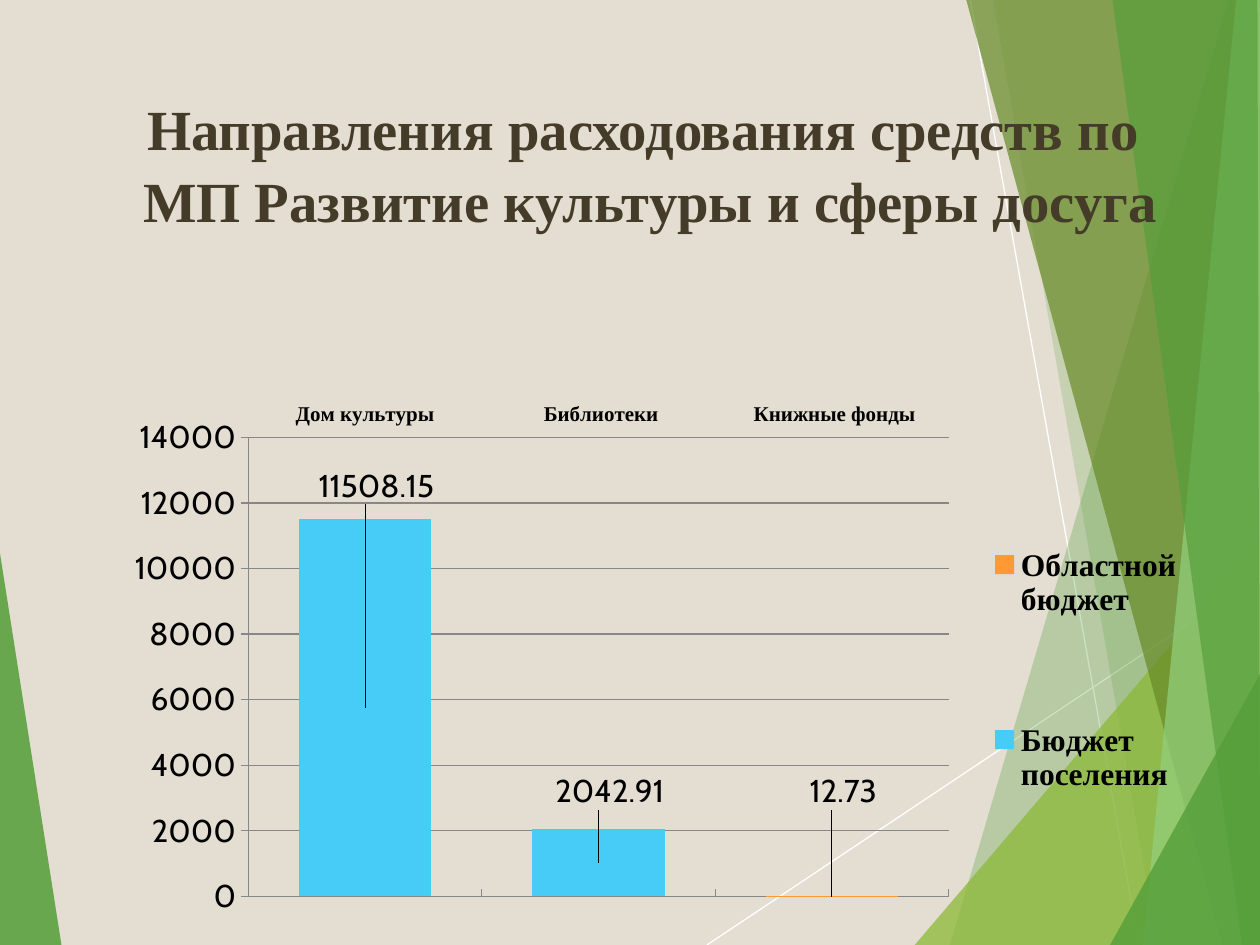
"""Build a slide with a stacked column chart of culture spending."""
from lxml import etree
from pptx import Presentation
from pptx import util as u
from pptx.chart.data import CategoryChartData
from pptx.dml.color import RGBColor
from pptx.enum import chart as charts, shapes, text
from pptx.oxml.ns import qn

WHITE = RGBColor(0xFF, 0xFF, 0xFF)
BLACK = RGBColor(0, 0, 0)
SAND = RGBColor(0xE3, 0xDE, 0xD1)
BROWN = RGBColor(0x44, 0x3C, 0x29)
GREY = RGBColor(0x87, 0x87, 0x87)
GREEN = RGBColor(0x54, 0x9E, 0x39)
LIME = RGBColor(0x8A, 0xB8, 0x33)
OLIVE = RGBColor(0x67, 0x8A, 0x26)
MINT = RGBColor(0x93, 0xD0, 0x7D)
BLUE = RGBColor(0x46, 0xCC, 0xF6)
ORANGE = RGBColor(0xFF, 0x99, 0x33)

SERIF, SANS = "Times New Roman", "Cabin"
WIDTH, HEIGHT = 25.4, 19.05
LEFT, TOP, INNER_WIDTH = 1.7, 1.7, 22.81
TITLE_HEIGHT, CHART_HEIGHT = 3.66, 13.16

TITLE = "Направления расходования средств по \vМП Развитие культуры и сферы досуга"
CATEGORIES = ["Дом культуры", " Библиотеки", " Книжные фонды"]
SERIES = [
    ("Бюджет поселения", [11508.15, 2042.91, None], BLUE),
    ("Областной бюджет", [None, None, 12.73], ORANGE),
]
LABEL_OFFSETS = [(0.01, -0.34), (0.01, -0.11), (0.01, -0.16)]
PLOT_AREA = {"x": 0.145, "y": 0.263, "w": 0.619, "h": 0.703}
LEGEND_AREA = {"x": 0.785, "y": 0.27, "w": 0.2, "h": 0.7}

RAYS = [((14.25, HEIGHT), (WIDTH, 11.61)), ((19.56, 0), (22.96, HEIGHT))]
FACETS = [
    (GREEN, 85, [(0, 11.15), (1.24, HEIGHT), (0, HEIGHT)]),
    (GREEN, 30, [(24.77, 0), (19.15, HEIGHT), (WIDTH, HEIGHT), (WIDTH, 0)]),
    (GREEN, 20, [(20.02, 0), (23.34, HEIGHT), (WIDTH, HEIGHT), (WIDTH, 0)]),
    (LIME, 72, [(18.44, HEIGHT), (WIDTH, 10.9), (WIDTH, HEIGHT)]),
    (OLIVE, 70, [(19.48, 0), (24.64, HEIGHT), (WIDTH, HEIGHT), (WIDTH, 0)]),
    (MINT, 70, [(24.92, 0), (23.04, HEIGHT), (WIDTH, HEIGHT), (WIDTH, 0)]),
    (GREEN, 65, [(22.43, 0), (25.04, HEIGHT), (WIDTH, HEIGHT), (25.35, 0)]),
    (GREEN, 80, [(22.38, HEIGHT), (WIDTH, 13.59), (WIDTH, HEIGHT)]),
]


def set_font(font, size=18, name=SERIF, bold=False, color=BLACK):
    font.size, font.name, font.bold = u.Pt(size), name, bold
    font.color.rgb = color


def write_text(frame, content, align=text.PP_ALIGN.CENTER, spacing=1.05, **style):
    frame.text = content
    frame.word_wrap = True
    frame.auto_size = text.MSO_AUTO_SIZE.NONE
    frame.vertical_anchor = text.MSO_ANCHOR.TOP
    para = frame.paragraphs[0]
    para.alignment, para.line_spacing = align, spacing
    for span in para.runs:
        set_font(span.font, **style)


def add_ray(page, start, end):
    ends = [u.Cm(value) for value in (*start, *end)]
    ray = page.shapes.add_connector(shapes.MSO_CONNECTOR.STRAIGHT, *ends)
    ray.line.color.rgb, ray.line.width = WHITE, u.Pt(0.75)
    etree.SubElement(ray._element.spPr, qn("a:effectLst"))


def add_facet(page, color, opacity, corners):
    points = [(u.Cm(x), u.Cm(y)) for x, y in corners]
    builder = page.shapes.build_freeform(*points[0])
    builder.add_line_segments(points[1:], close=True)
    facet = builder.convert_to_shape()
    facet.shadow.inherit = False
    facet.line.fill.background()
    facet.fill.solid()
    facet.fill.fore_color.rgb = color
    tint = facet._element.spPr.find(".//" + qn("a:srgbClr"))
    etree.SubElement(tint, qn("a:alpha"), val=str(opacity * 1000))


def set_layout(parent, index, inner=False, fixed=True, **values):
    for old in parent.findall(qn("c:layout")):
        parent.remove(old)
    layout = etree.Element(qn("c:layout"))
    manual = etree.SubElement(layout, qn("c:manualLayout"))
    if inner:
        etree.SubElement(manual, qn("c:layoutTarget"), val="inner")
    if fixed:
        for side in "xy":
            etree.SubElement(manual, qn(f"c:{side}Mode"), val="edge")
    for key, value in values.items():
        etree.SubElement(manual, qn(f"c:{key}"), val=str(value))
    parent.insert(index, layout)


def add_budget_chart(page):
    data = CategoryChartData()
    data.categories = CATEGORIES
    for name, values, _ in SERIES:
        data.add_series(name, values)
    frame = page.shapes.add_chart(
        charts.XL_CHART_TYPE.COLUMN_STACKED, u.Cm(LEFT), u.Cm(TOP + TITLE_HEIGHT),
        u.Cm(INNER_WIDTH), u.Cm(CHART_HEIGHT), data)
    chart = frame.chart
    chart.has_title = False
    set_font(chart.font, name=SANS)

    plot = chart.plots[0]
    plot.gap_width, plot.overlap, plot.vary_by_categories = 76, 100, False
    for series, (_, values, color) in zip(plot.series, SERIES):
        series.format.fill.solid()
        series.format.fill.fore_color.rgb = color
        for index, value in enumerate(values):
            if value is not None:
                label = series.points[index].data_label
                set_font(label.font, name=SANS)
                x, y = LABEL_OFFSETS[index]
                set_layout(label._get_or_add_dLbl(), 1, fixed=False, x=x, y=y)

    across, upward = chart.category_axis, chart.value_axis
    for axis in (across, upward):
        axis.format.line.color.rgb = GREY
    across.tick_label_position = charts.XL_TICK_LABEL_POSITION.HIGH
    across.major_tick_mark = charts.XL_TICK_MARK.INSIDE
    set_font(across.tick_labels.font, size=12, bold=True)
    upward.minimum_scale, upward.maximum_scale, upward.major_unit = 0, 14000, 2000
    upward.major_tick_mark = charts.XL_TICK_MARK.OUTSIDE
    upward.major_gridlines.format.line.color.rgb = GREY

    chart.has_legend = True
    legend = chart.legend
    legend.position = charts.XL_LEGEND_POSITION.RIGHT
    legend.include_in_layout = False
    set_font(legend.font, bold=True)
    set_layout(legend._element, 1, **LEGEND_AREA)
    set_layout(plot._element.getparent(), 0, inner=True, **PLOT_AREA)


def main():
    deck = Presentation()
    deck.slide_width, deck.slide_height = u.Cm(WIDTH), u.Cm(HEIGHT)
    page = deck.slides.add_slide(deck.slide_layouts[5])
    page.background.fill.solid()
    page.background.fill.fore_color.rgb = SAND
    for start, end in RAYS:
        add_ray(page, start, end)
    for facet in FACETS:
        add_facet(page, *facet)

    title = page.shapes.title
    title.left, title.top = u.Cm(LEFT), u.Cm(TOP)
    title.width, title.height = u.Cm(INNER_WIDTH), u.Cm(TITLE_HEIGHT)
    write_text(title.text_frame, TITLE, size=32.4, bold=True, color=BROWN)
    page.shapes._spTree.append(title._element)

    add_budget_chart(page)
    deck.save("out.pptx")


if __name__ == "__main__":
    main()
